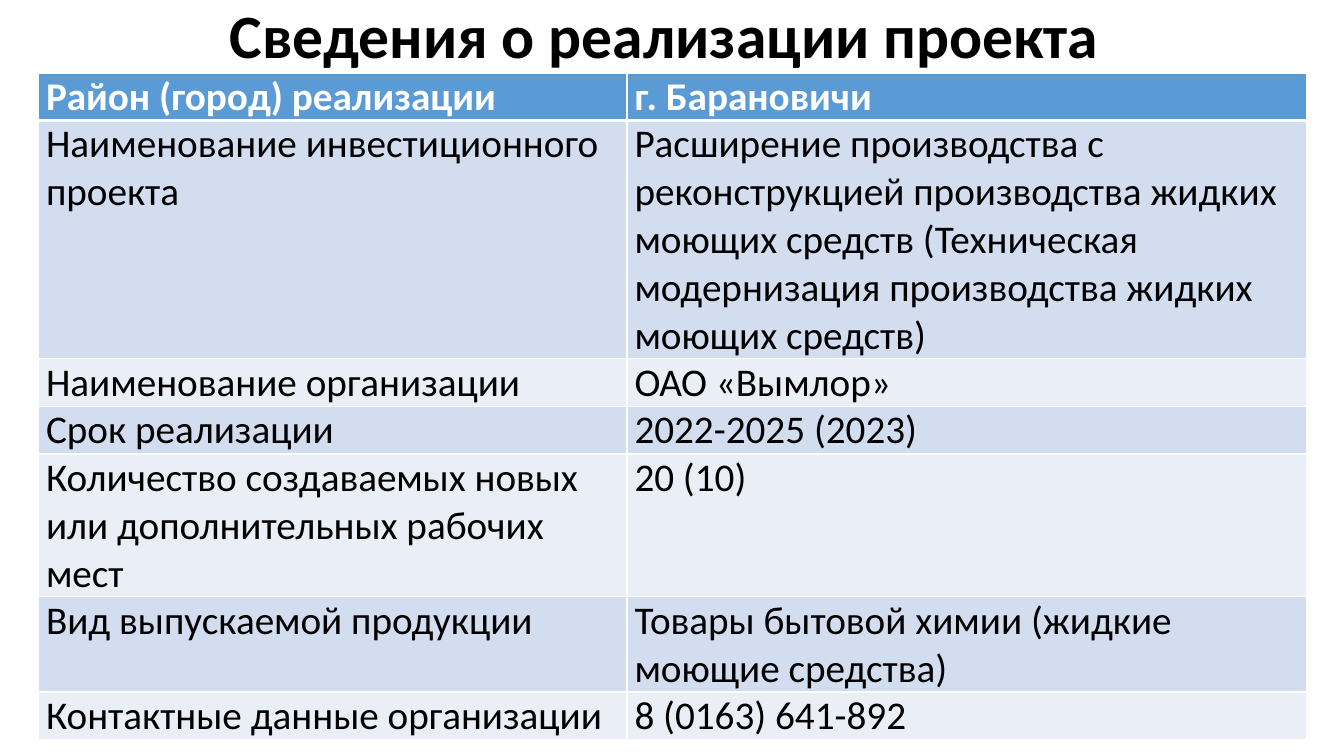
import dataclasses

import pptx
import pptx.dml.color
import pptx.enum.text
import pptx.oxml
import pptx.oxml.ns
import pptx.util
from pptx.util import Cm


@dataclasses.dataclass(frozen=True)
class Theme:
    font: str = "Calibri"
    title_size: int = 44
    table_size: int = 28
    text: str = "000000"
    header_text: str = "FFFFFF"
    header_fill: str = "5B9BD5"
    odd_fill: str = "D2DEEF"
    even_fill: str = "EAEFF7"
    border: str = "FFFFFF"
    border_width: int = 1
    header_border_width: int = 3


@dataclasses.dataclass(frozen=True)
class Detail:
    label: str
    value: str
    lines: int = 1


THEME = Theme()
LINE_HEIGHT = 1.2
COLUMN_WIDTHS = (14.83, 17.12)
DETAILS = (
    Detail("Район (город) реализации", "г. Барановичи"),
    Detail(
        "Наименование инвестиционного проекта",
        "Расширение производства с реконструкцией производства жидких моющих средств "
        "(Техническая модернизация производства жидких моющих средств)",
        5,
    ),
    Detail("Наименование организации", "ОАО «Вымлор»"),
    Detail("Срок реализации", "2022-2025 (2023)"),
    Detail("Количество создаваемых новых или дополнительных рабочих мест", "20 (10)", 3),
    Detail("Вид выпускаемой продукции", "Товары бытовой химии (жидкие моющие средства)", 2),
    Detail("Контактные данные организации", "8 (0163) 641-892"),
)


def apply_format(target: object, values: dict[str, object]) -> None:
    for attribute, value in values.items():
        setattr(target, attribute, value)


def write_text(frame: pptx.text.text.TextFrame, text: str, size: int, color: str, bold: bool) -> None:
    run = frame.paragraphs[0].add_run()
    run.text = text
    apply_format(run.font, {"name": THEME.font, "size": pptx.util.Pt(size), "bold": bold})
    run.font.color.rgb = pptx.dml.color.RGBColor.from_string(color)


def add_border(cell: pptx.table._Cell, side: str, width: int) -> None:
    properties = cell._tc.get_or_add_tcPr()
    properties.append(pptx.oxml.parse_xml(
        f'<a:{side} {pptx.oxml.ns.nsdecls("a")} w="{pptx.util.Pt(width)}"><a:solidFill>'
        f'<a:srgbClr val="{THEME.border}"/></a:solidFill></a:{side}>'
    ))


def draw_cell(cell: pptx.table._Cell, text: str, row: int) -> None:
    header = row == 0
    fill = THEME.header_fill if header else THEME.odd_fill if row % 2 else THEME.even_fill
    apply_format(cell, {
        "margin_left": Cm(0.19), "margin_right": Cm(0.19),
        "margin_top": 0, "margin_bottom": 0,
    })
    borders = {side: THEME.border_width for side in ("lnL", "lnR", "lnT", "lnB")}
    if header:
        borders["lnB"] = THEME.header_border_width
    elif row == 1:
        borders["lnT"] = THEME.header_border_width
    for side, width in borders.items():
        add_border(cell, side, width)
    cell.fill.solid()
    cell.fill.fore_color.rgb = pptx.dml.color.RGBColor.from_string(fill)
    color = THEME.header_text if header else THEME.text
    write_text(cell.text_frame, text, THEME.table_size, color, header)


def draw_title(slide: pptx.slide.Slide) -> None:
    frame = slide.shapes.add_textbox(Cm(2.15), 0, Cm(29.21), Cm(1.96)).text_frame
    apply_format(frame, {
        "word_wrap": True, "margin_top": 0, "margin_bottom": 0,
        "vertical_anchor": pptx.enum.text.MSO_ANCHOR.MIDDLE,
    })
    apply_format(frame.paragraphs[0], {
        "alignment": pptx.enum.text.PP_ALIGN.CENTER, "line_spacing": 0.9,
    })
    write_text(frame, "Сведения о реализации проекта", THEME.title_size, THEME.text, True)


def draw_details(slide: pptx.slide.Slide) -> None:
    height = LINE_HEIGHT * sum(detail.lines for detail in DETAILS)
    table = slide.shapes.add_table(
        len(DETAILS), len(COLUMN_WIDTHS), Cm(0.97), Cm(1.84), Cm(sum(COLUMN_WIDTHS)), Cm(height)
    ).table
    for column, width in zip(table.columns, COLUMN_WIDTHS):
        column.width = Cm(width)
    for row, detail in enumerate(DETAILS):
        table.rows[row].height = Cm(LINE_HEIGHT * detail.lines)
        for column, text in enumerate((detail.label, detail.value)):
            draw_cell(table.cell(row, column), text, row)


def main() -> None:
    presentation = pptx.Presentation()
    apply_format(presentation, {"slide_width": Cm(33.87), "slide_height": Cm(19.05)})
    slide = presentation.slides.add_slide(presentation.slide_layouts[6])
    draw_title(slide)
    draw_details(slide)
    presentation.save("out.pptx")


if __name__ == "__main__":
    main()
